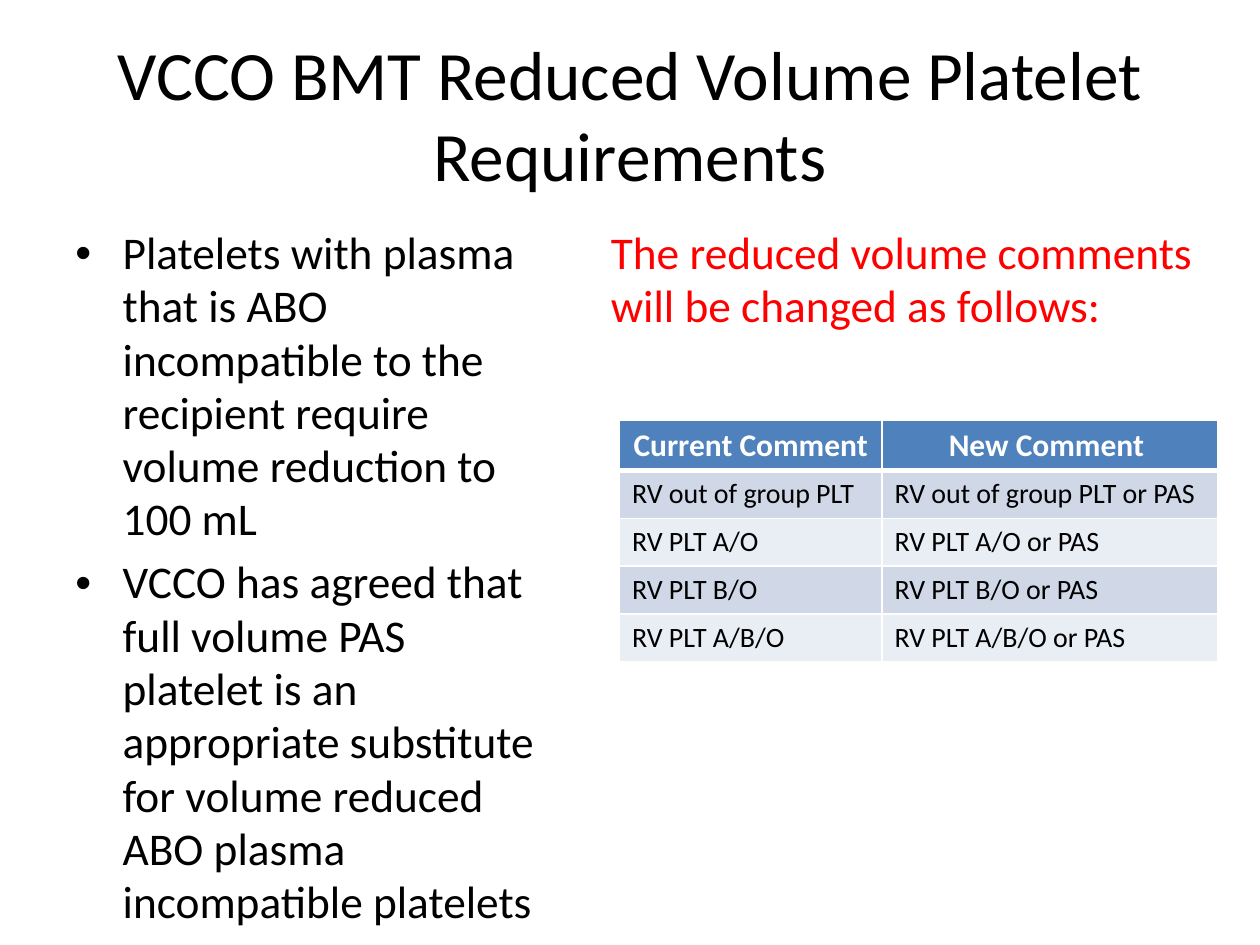
import pptx
import pptx.dml.color
import pptx.enum.text
import pptx.oxml
import pptx.oxml.ns
import pptx.util

Pt = pptx.util.Pt
ALIGN = pptx.enum.text.PP_ALIGN
ANCHOR = pptx.enum.text.MSO_ANCHOR
NS = pptx.oxml.ns.nsdecls("a")


def colour(value):
    return pptx.dml.color.RGBColor.from_string(value)


class SlideBuilder:
    FONT = "Calibri"
    BLACK, WHITE, RED = "000000", "FFFFFF", "FF0000"
    HEADER = "4F81BD"
    BANDS = ("D0D8E8", "E9EDF4")
    INDENT = 27
    LINE_SPACING = 0.98

    def __init__(self, deck):
        self.slide = deck.slides.add_slide(deck.slide_layouts[6])

    def run(self, paragraph, text, size, ink, bold=False):
        run = paragraph.add_run()
        run.text = text
        run.font.name = self.FONT
        run.font.size = Pt(size)
        run.font.bold = bold
        run.font.color.rgb = colour(ink)

    def bullet(self, paragraph):
        properties = paragraph._p.get_or_add_pPr()
        properties.set("marL", str(Pt(self.INDENT)))
        properties.set("indent", str(-Pt(self.INDENT)))
        properties.append(pptx.oxml.parse_xml(f'<a:buFont {NS} typeface="Arial"/>'))
        properties.append(pptx.oxml.parse_xml(f'<a:buChar {NS} char="•"/>'))

    def text(self, box, paragraphs, size, ink=BLACK, align=ALIGN.LEFT,
             anchor=ANCHOR.TOP, bullets=False):
        frame = self.slide.shapes.add_textbox(*map(Pt, box)).text_frame
        frame.word_wrap = True
        frame.vertical_anchor = anchor
        for index, words in enumerate(paragraphs):
            paragraph = frame.add_paragraph() if index else frame.paragraphs[0]
            if bullets:
                self.bullet(paragraph)
            paragraph.alignment = align
            paragraph.line_spacing = self.LINE_SPACING
            if index:
                paragraph.space_before = Pt(5.5)
            self.run(paragraph, words, size, ink)

    def borders(self, cell, bottom):
        properties = cell._tc.get_or_add_tcPr()
        widths = {"lnL": 1, "lnR": 1, "lnT": 1, "lnB": bottom}
        for position, (side, width) in enumerate(widths.items()):
            properties.insert(position, pptx.oxml.parse_xml(
                f'<a:{side} {NS} w="{Pt(width)}"><a:solidFill>'
                f'<a:srgbClr val="{self.WHITE}"/></a:solidFill></a:{side}>'))

    def table(self, left, top, widths, row_height, rows):
        table = self.slide.shapes.add_table(
            len(rows), len(widths), Pt(left), Pt(top),
            Pt(sum(widths)), Pt(row_height * len(rows))).table
        for column, width in zip(table.columns, widths):
            column.width = Pt(width)
        for r, row in enumerate(rows):
            table.rows[r].height = Pt(row_height)
            header = r == 0
            for c, words in enumerate(row):
                cell = table.cell(r, c)
                cell.fill.solid()
                cell.fill.fore_color.rgb = colour(
                    self.HEADER if header else self.BANDS[(r - 1) % 2])
                self.borders(cell, 3 if header else 1)
                paragraph = cell.text_frame.paragraphs[0]
                paragraph.alignment = ALIGN.CENTER if header else ALIGN.LEFT
                self.run(paragraph, words, 18 if header else 16,
                         self.WHITE if header else self.BLACK, header)


def main():
    deck = pptx.Presentation()
    deck.slide_width, deck.slide_height = Pt(720), Pt(540)
    builder = SlideBuilder(deck)

    # Title
    builder.text((36, 21.6, 648, 90),
                 ["VCCO BMT Reduced Volume Platelet Requirements"],
                 39.6, align=ALIGN.CENTER, anchor=ANCHOR.MIDDLE)

    # Requirements
    builder.text((36, 126, 288, 356.4), [
        "Platelets with plasma that is ABO incompatible to the recipient "
        "require volume reduction to 100 mL",
        "VCCO has agreed that full volume PAS platelet is an appropriate "
        "substitute for volume reduced ABO plasma incompatible platelets",
    ], 25.9, bullets=True)

    # Comment changes
    builder.text((342, 126, 360, 356.4),
                 ["The reduced volume comments will be changed as follows:"],
                 25.9, builder.RED)
    current_comments = ["RV out of group PLT", "RV PLT A/O", "RV PLT B/O", "RV PLT A/B/O"]
    changes = [(comment, f"{comment} or PAS") for comment in current_comments]
    builder.table(354, 240, (150, 192), 27.36,
                  [("Current Comment", "New Comment "), *changes])

    deck.save("out.pptx")


if __name__ == "__main__":
    main()
